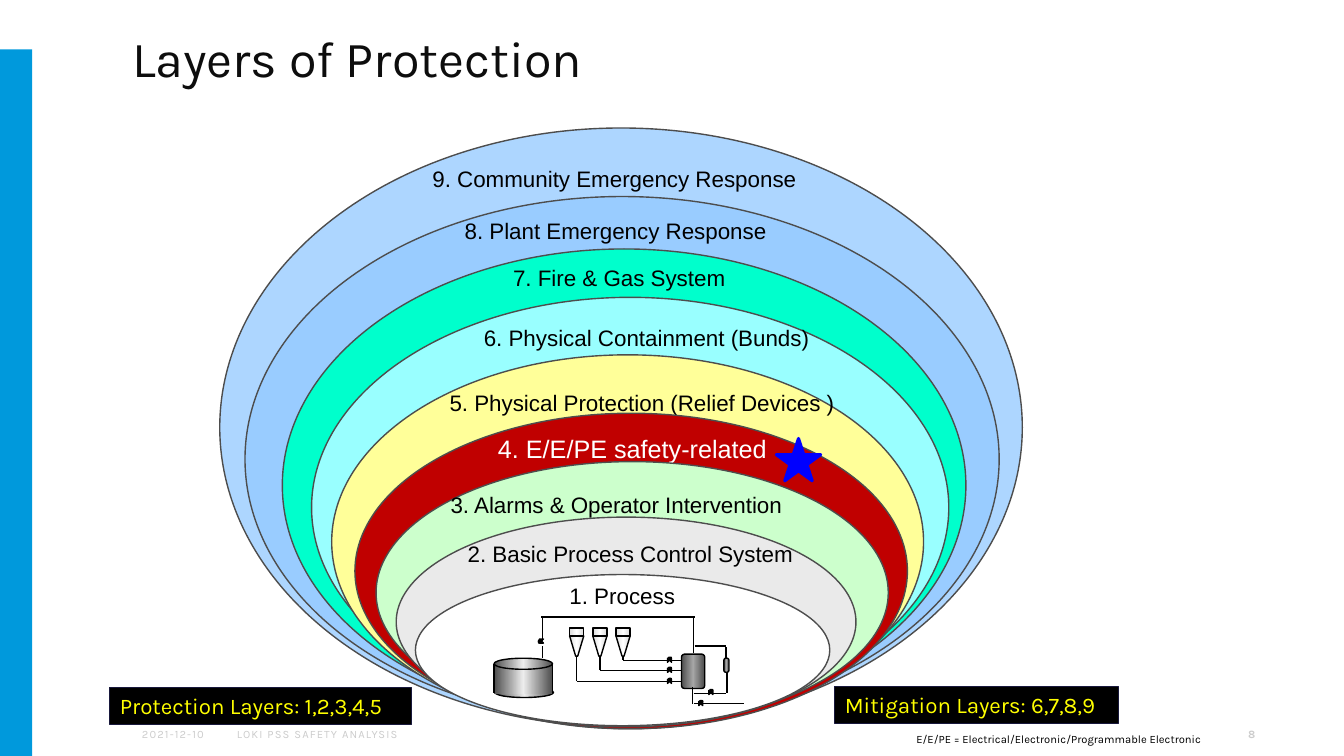
from copy import deepcopy
from typing import NamedTuple, Optional, Union

from lxml import etree
from pptx import Presentation
from pptx.dml.color import RGBColor
from pptx.enum.shapes import MSO_CONNECTOR, MSO_SHAPE
from pptx.enum.text import MSO_ANCHOR, MSO_AUTO_SIZE, PP_ALIGN
from pptx.oxml.ns import qn
from pptx.util import Inches, Pt

STRAIGHT = MSO_CONNECTOR.STRAIGHT
RECTANGLE = MSO_SHAPE.RECTANGLE
ROUNDED = MSO_SHAPE.ROUNDED_RECTANGLE
ELLIPSE = MSO_SHAPE.OVAL
TRIANGLE = MSO_SHAPE.ISOSCELES_TRIANGLE
STAR = MSO_SHAPE.STAR_5_POINT
TOP, MIDDLE = MSO_ANCHOR.TOP, MSO_ANCHOR.MIDDLE
LEFT, RIGHT = PP_ALIGN.LEFT, PP_ALIGN.RIGHT
FIT_SHAPE, FIXED = MSO_AUTO_SIZE.SHAPE_TO_FIT_TEXT, MSO_AUTO_SIZE.NONE

Box = tuple[float, float, float, float]


class Steel(NamedTuple):
    edge: RGBColor
    center: RGBColor


class Layer(NamedTuple):
    ellipse: Box
    fill: RGBColor
    label: str
    label_box: Box
    size: int = 16
    color: RGBColor = RGBColor(0x00, 0x00, 0x00)


class Footer(NamedTuple):
    box: Box
    text: str
    align: PP_ALIGN = LEFT
    bold: bool = False
    spacing: int = 80


class Valve(NamedTuple):
    x: float
    y: float
    vertical: bool = False


Fill = Union[RGBColor, Steel]

BLACK = RGBColor(0x00, 0x00, 0x00)
WHITE = RGBColor(0xFF, 0xFF, 0xFF)
ACCENT = RGBColor(0x00, 0x99, 0xDC)
TITLE_COLOR = RGBColor(0x0D, 0x0D, 0x0D)
FOOTER_GRAY = RGBColor(0xCC, 0xCC, 0xCC)
OUTLINE = RGBColor(0x4D, 0x4D, 0x4D)
STAR_BLUE = RGBColor(0x00, 0x00, 0xFF)
YELLOW = RGBColor(0xFF, 0xFF, 0x00)
NAVY = RGBColor(0x18, 0x18, 0x3C)
TANK_STEEL = Steel(OUTLINE, RGBColor(0xED, 0xED, 0xED))
VESSEL_STEEL = Steel(OUTLINE, RGBColor(0xA6, 0xA6, 0xA6))
HOPPER_STEEL = Steel(RGBColor(0xDA, 0xDA, 0xDA), WHITE)

LAYERS = [
    Layer((2.18, 1.27, 7.96, 5.94), RGBColor(0xAD, 0xD6, 0xFF),
          "9. Community Emergency Response", (4.19, 1.59, 4.09, 0.37)),
    Layer((2.43, 1.95, 7.48, 5.21), RGBColor(0x99, 0xCC, 0xFF),
          "8. Plant Emergency Response", (4.51, 2.11, 3.4, 0.37)),
    Layer((2.8, 2.47, 6.78, 4.69), RGBColor(0x00, 0xFF, 0xCC),
          "7. Fire & Gas System", (4.99, 2.57, 2.58, 0.37)),
    Layer((3.09, 2.95, 6.32, 4.17), RGBColor(0x99, 0xFF, 0xFF),
          "6. Physical Containment (Bunds)", (4.7, 3.17, 3.71, 0.37)),
    Layer((3.29, 3.52, 5.87, 3.71), RGBColor(0xFF, 0xFF, 0x99),
          "5. Physical Protection (Relief Devices )", (4.36, 3.81, 4.38, 0.37)),
    Layer((3.52, 4.1, 5.48, 3.13), RGBColor(0xC0, 0x00, 0x00),
          "4. E/E/PE safety-related", (4.84, 4.25, 3.01, 0.4), 18, WHITE),
    Layer((3.73, 4.58, 5.08, 2.6), RGBColor(0xCC, 0xFF, 0xCC),
          "3. Alarms & Operator Intervention", (4.37, 4.82, 3.79, 0.37)),
    Layer((3.93, 5.13, 4.56, 2.08), RGBColor(0xEA, 0xEA, 0xEA),
          "2. Basic Process Control System", (4.54, 5.31, 3.47, 0.37)),
    Layer((4.12, 5.7, 4.11, 1.5), WHITE, "1. Process", (5.55, 5.73, 1.26, 0.37)),
]
FOOTERS = [
    Footer((2.25, 7.08, 4.72, 0.4), "LOKI PSS SAFETY ANALYSIS"),
    Footer((9.55, 7.08, 3, 0.4), "8", RIGHT, True, 0),
    Footer((1.31, 7.08, 0.91, 0.4), "2021-12-10"),
]
KEYS = [
    ("Protection Layers: 1,2,3,4,5", (1.09, 6.82, 2.99, 0.37)),
    ("Mitigation Layers: 6,7,8,9", (8.28, 6.81, 2.81, 0.37)),
]
PIPES = [
    (4.9, 6.59, 4.9, 6.88), (5.48, 6.59, 5.48, 6.88), (5.38, 6.41, 5.38, 6.53),
    (5.38, 6.12, 5.38, 6.36), (6.89, 6.12, 5.37, 6.12), (6.88, 6.12, 6.88, 6.48),
    (6.89, 6.41, 7.2, 6.41), (7.2, 6.42, 7.2, 6.53), (7.21, 6.68, 7.21, 6.88),
    (6.88, 6.88, 7.2, 6.88), (6.87, 6.82, 6.87, 6.98), (6.88, 6.98, 7.38, 6.98),
]
FEED_LINES = [(5.72, 6.76), (5.95, 6.65), (6.18, 6.55)]
VALVES = [Valve(5.37, 6.36, True), Valve(6.95, 6.98), Valve(6.64, 6.76),
          Valve(6.64, 6.55), Valve(6.64, 6.65), Valve(7.05, 6.87)]


def write(shape, text: str, *, size: float, color: RGBColor, font: str = "Karla",
          bold: bool = False, align: PP_ALIGN = LEFT, anchor: MSO_ANCHOR = TOP,
          wrap: bool = True, fit: MSO_AUTO_SIZE = FIXED, spacing: int = 0) -> None:
    frame = shape.text_frame
    frame.word_wrap, frame.auto_size, frame.vertical_anchor = wrap, fit, anchor
    paragraph = frame.paragraphs[0]
    paragraph.alignment = align
    run = paragraph.add_run()
    run.text = text
    run.font.name, run.font.size, run.font.bold = font, Pt(size), bold
    run.font.color.rgb = color
    if spacing:
        run._r.get_or_add_rPr().set("spc", str(spacing))


def add_text(slide, box: Box, text: str, **text_format) -> None:
    write(slide.shapes.add_textbox(*map(Inches, box)), text, **text_format)


def style(shape, fill: Fill, line: Optional[RGBColor], width: float) -> None:
    shape.shadow.inherit = False
    if isinstance(fill, Steel):
        shape.fill.gradient()
        shape.fill.gradient_angle = 0
        stop_list = shape._element.spPr.find(".//" + qn("a:gsLst"))
        stop_list.insert(1, deepcopy(stop_list[0]))
        colors = (fill.edge, fill.center, fill.edge)
        for stop, position, color in zip(shape.fill.gradient_stops, (0, 0.5, 1), colors):
            stop.position, stop.color.rgb = position, color
    else:
        shape.fill.solid()
        shape.fill.fore_color.rgb = fill
    if line is None:
        shape.line.fill.background()
    else:
        shape.line.color.rgb, shape.line.width = line, Pt(width)


def add_preset(slide, kind: MSO_SHAPE, box: Box, fill: Fill, line: Optional[RGBColor] = BLACK,
               width: float = 1, rotation: float = 0, corner: Optional[float] = None):
    shape = slide.shapes.add_shape(kind, *map(Inches, box))
    style(shape, fill, line, width)
    shape.rotation = rotation
    if corner is not None:
        shape.adjustments[0] = corner
    return shape


def add_pipe(slide, *ends: float) -> None:
    pipe = slide.shapes.add_connector(STRAIGHT, *map(Inches, ends))
    pipe.line.color.rgb, pipe.line.width = BLACK, Pt(1)
    etree.SubElement(pipe._element.spPr, qn("a:effectLst"))


def add_hopper(slide, x: float) -> None:
    outline = [(x - 0.07, 6.31), (x - 0.01, 6.51), (x + 0.01, 6.51), (x + 0.07, 6.31)]
    points = [(Inches(px), Inches(py)) for px, py in outline]
    builder = slide.shapes.build_freeform(*points[0])
    builder.add_line_segments(points[1:], close=True)
    style(builder.convert_to_shape(), HOPPER_STEEL, BLACK, 1)
    add_preset(slide, RECTANGLE, (x - 0.07, 6.23, 0.14, 0.08), HOPPER_STEEL)


def add_valve(slide, valve: Valve) -> None:
    x, y, vertical = valve
    for side, turn in ((-1, 90), (1, 270)):
        dx, dy = (0, side * 0.01) if vertical else (side * 0.01, 0)
        add_preset(slide, TRIANGLE, (x + dx - 0.02, y + dy - 0.01, 0.04, 0.02), ACCENT,
                   rotation=(turn + 90) % 360 if vertical else turn)
    if vertical:
        handle, stem = (x - 0.03, y - 0.01, 0.01, 0.03), (x - 0.02, y, x, y)
    else:
        handle, stem = (x - 0.01, y - 0.03, 0.03, 0.01), (x, y - 0.02, x, y)
    add_preset(slide, ELLIPSE, handle, ACCENT)
    add_pipe(slide, *stem)


def add_process(slide) -> None:
    add_preset(slide, ELLIPSE, (4.91, 6.82, 0.58, 0.1), TANK_STEEL)
    add_preset(slide, RECTANGLE, (4.9, 6.59, 0.58, 0.3), TANK_STEEL, None)
    add_preset(slide, ELLIPSE, (4.9, 6.53, 0.58, 0.11), TANK_STEEL)
    for x, y in FEED_LINES:
        add_pipe(slide, x, 6.52, x, y)
        add_pipe(slide, x, y, 6.76, y)
        add_hopper(slide, x)
    add_preset(slide, ROUNDED, (6.76, 6.49, 0.23, 0.34), VESSEL_STEEL, corner=0.125)
    add_preset(slide, ROUNDED, (7.18, 6.53, 0.05, 0.14), VESSEL_STEEL, corner=0.4)
    for pipe in PIPES:
        add_pipe(slide, *pipe)
    for valve in VALVES:
        add_valve(slide, valve)


def main() -> None:
    presentation = Presentation()
    presentation.slide_width, presentation.slide_height = Inches(13.33), Inches(7.5)
    slide = presentation.slides.add_slide(presentation.slide_layouts[5])
    title = slide.shapes.title
    title.left, title.top, title.width, title.height = map(Inches, (1.21, 0.29, 10.24, 0.72))
    write(title, "Layers of Protection", size=36, color=TITLE_COLOR)
    title.text_frame.paragraphs[0].line_spacing = 0.9
    add_preset(slide, RECTANGLE, (0, 0.49, 0.32, 7.01), ACCENT, None)
    for box, text, align, bold, spacing in FOOTERS:
        add_text(slide, box, text, size=8, color=FOOTER_GRAY, anchor=MIDDLE,
                 align=align, bold=bold, spacing=spacing)
    for ellipse, fill, label, label_box, size, color in LAYERS:
        add_preset(slide, ELLIPSE, ellipse, fill, OUTLINE)
        add_text(slide, label_box, label, size=size, color=color, font="Arial",
                 wrap=False, fit=FIT_SHAPE)
    add_process(slide)
    add_preset(slide, STAR, (7.7, 4.35, 0.44, 0.42), STAR_BLUE, STAR_BLUE, 2.25)
    for text, box in KEYS:
        key = add_preset(slide, RECTANGLE, box, BLACK, NAVY, 0.75)
        write(key, text, size=16, color=YELLOW, fit=FIT_SHAPE)
    add_text(slide, (8.99, 7.22, 3.46, 0.24), size=8, color=BLACK, fit=FIT_SHAPE,
             text="E/E/PE = Electrical/Electronic/Programmable Electronic")
    presentation.save("out.pptx")


if __name__ == "__main__":
    main()
